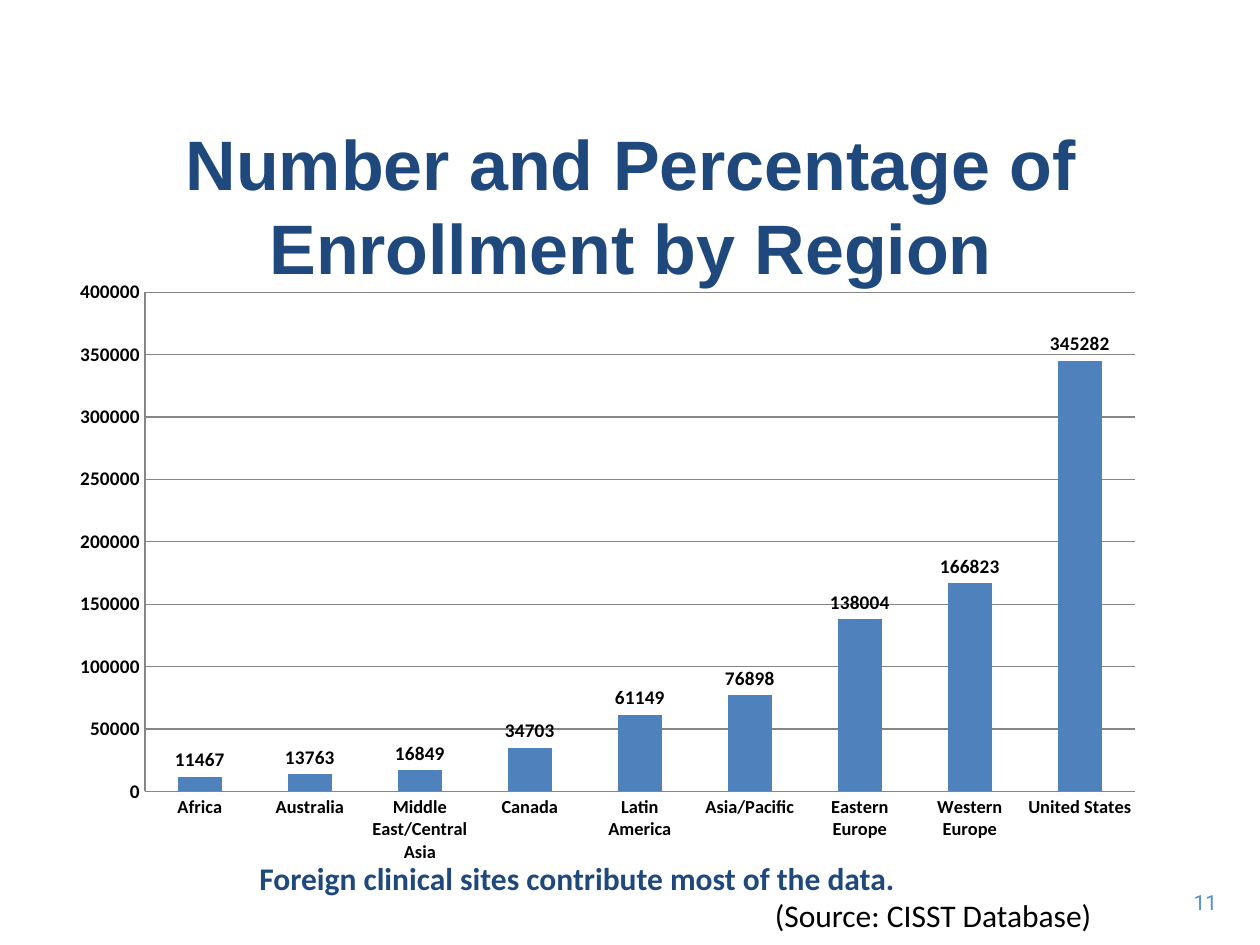
from pptx import Presentation
from pptx.chart.data import CategoryChartData
from pptx.dml.color import RGBColor
from pptx.enum import chart as ch, text
from pptx.util import Cm, Pt

NAVY, BLACK, GRID = "1F497D", "000000", "868686"
ENROLLMENT = {
    "Africa": 11467,
    "Australia": 13763,
    "Middle East/Central Asia": 16849,
    "Canada": 34703,
    "Latin America": 61149,
    "Asia/Pacific": 76898,
    "Eastern Europe": 138004,
    "Western Europe": 166823,
    "United States": 345282,
}


def rgb(color):
    return RGBColor.from_string(color)


def set_font(font, color=BLACK, **values):
    """Apply name, size in points, bold and colour to a font."""
    values = {"name": "Calibri", "bold": False, **values}
    values["size"] = Pt(values["size"])
    for name, value in values.items():
        setattr(font, name, value)
    font.color.rgb = rgb(color)


def write(tf, words, align, **font):
    p = tf.paragraphs[0]
    p.alignment = align
    r = p.add_run()
    r.text = words
    set_font(r.font, **font)


def place_title(s, box, words):
    title = s.shapes.title
    title.left, title.top, title.width, title.height = map(Cm, box)
    tf = title.text_frame
    tf.word_wrap = True
    tf.auto_size = text.MSO_AUTO_SIZE.NONE
    tf.vertical_anchor = text.MSO_ANCHOR.MIDDLE
    write(tf, words, text.PP_ALIGN.CENTER,
          name="Arial", size=40, bold=True, color=NAVY)


def add_text(s, box, words, align, wrap=False, **font):
    tf = s.shapes.add_textbox(*map(Cm, box)).text_frame
    tf.word_wrap = wrap
    tf.auto_size = text.MSO_AUTO_SIZE.SHAPE_TO_FIT_TEXT
    write(tf, words, align, **font)


def add_enrollment_chart(s, box):
    data = CategoryChartData(number_format="0")
    data.categories = list(ENROLLMENT)
    data.add_series("Series 1", list(ENROLLMENT.values()))
    chart = s.shapes.add_chart(
        ch.XL_CHART_TYPE.COLUMN_CLUSTERED, *map(Cm, box), data).chart
    chart.has_title = chart.has_legend = False
    set_font(chart.font, size=10)

    for axis, size in ((chart.category_axis, 10.5), (chart.value_axis, 11)):
        axis.major_tick_mark = axis.minor_tick_mark = ch.XL_TICK_MARK.NONE
        set_font(axis.tick_labels.font, size=size, bold=True)
        axis.format.line.color.rgb = rgb(GRID)
    value_axis = chart.value_axis
    value_axis.minimum_scale, value_axis.maximum_scale = 0, 400000
    value_axis.major_unit = 50000
    value_axis.has_major_gridlines = True
    value_axis.major_gridlines.format.line.color.rgb = rgb(GRID)

    plot = chart.plots[0]
    plot.gap_width = 150
    plot.vary_by_categories = False
    fill = plot.series[0].format.fill
    fill.solid()
    fill.fore_color.rgb = rgb("4F81BD")
    plot.has_data_labels = True
    labels = plot.data_labels
    labels.show_value = True
    labels.number_format, labels.number_format_is_linked = "0", False
    labels.position = ch.XL_LABEL_POSITION.OUTSIDE_END
    set_font(labels.font, size=11, bold=True)


def main():
    prs = Presentation()
    prs.slide_width, prs.slide_height = Cm(25.4), Cm(19.05)
    s = prs.slides.add_slide(prs.slide_layouts.get_by_name("Title Only"))
    align = text.PP_ALIGN
    add_text(s, (23.75, 17.81, 1.04, 0.76), "11", align.RIGHT,
             name="Roboto", size=12, color="558ED5")
    place_title(s, (0.89, 2.84, 23.65, 2.57),
                "Number and Percentage of Enrollment by Region")
    add_enrollment_chart(s, (1.17, 5.41, 22.15, 12.24))
    add_text(s, (15.37, 17.93, 6.99, 1.02), "(Source: CISST Database)",
             align.LEFT, size=18)
    add_text(s, (2.72, 17.2, 17.83, 1.02),
             "Foreign clinical sites contribute most of the data.",
             align.CENTER, wrap=True, size=18, bold=True, color=NAVY)
    prs.save("out.pptx")


if __name__ == "__main__":
    main()
